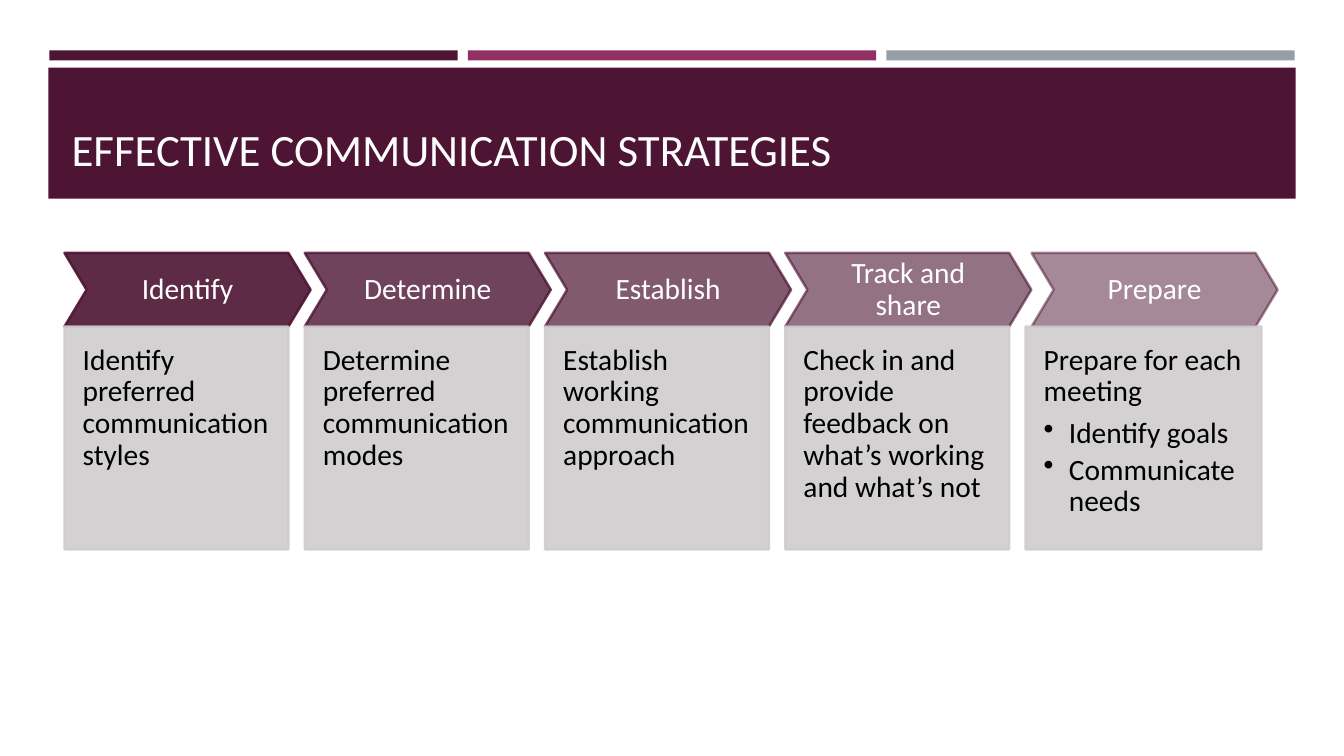
from lxml.etree import SubElement
from pptx import Presentation
from pptx.dml.color import RGBColor
from pptx.enum.shapes import MSO_SHAPE as SHAPE
from pptx.enum.text import MSO_ANCHOR as ANCHOR, PP_ALIGN as ALIGN
from pptx.oxml.ns import qn
from pptx.util import Inches, Pt

PLUM = RGBColor(0x4D, 0x14, 0x34)
MAGENTA = RGBColor(0x90, 0x31, 0x63)
SLATE = RGBColor(0x96, 0x9F, 0xA7)
GRAY = RGBColor(0xD0, 0xCC, 0xCE)
OFF_WHITE = RGBColor(0xFF, 0xFE, 0xFF)
WHITE = RGBColor(0xFF, 0xFF, 0xFF)
BLACK = RGBColor(0x00, 0x00, 0x00)
FONT = "Calibri"

STEPS = [
    ("Identify", "Identify preferred communication styles", []),
    ("Determine", "Determine preferred communication modes", []),
    ("Establish", "Establish working communication approach", []),
    ("Track and share",
     "Check in and provide feedback on what’s working and what’s not", []),
    ("Prepare", "Prepare for each meeting",
     ["Identify goals", "Communicate needs"]),
]
LEFT, PITCH = 0.64, 2.383
CHEVRON_TOP, CHEVRON_WIDTH, CHEVRON_HEIGHT = 2.51, 2.44, 0.73
BOX_TOP, BOX_WIDTH, BOX_HEIGHT = 3.24, 2.22, 2.21


def add_block(kind, left, top, width, height, color, opacity=None):
    """Add a filled shape; with an opacity in percent it also gets an outline."""
    shape = slide.shapes.add_shape(
        kind, Inches(left), Inches(top), Inches(width), Inches(height))
    shape.shadow.inherit = False
    shape.fill.solid()
    shape.fill.fore_color.rgb = color
    if opacity is None:
        shape.line.fill.background()
        return shape
    shape.line.color.rgb = color
    shape.line.width = Pt(1.75)
    for color_element in shape.element.spPr.iter(qn("a:srgbClr")):
        SubElement(color_element, qn("a:alpha"), val=str(opacity * 1000))
    return shape


def write(paragraph, text, color, size=21):
    run = paragraph.add_run()
    run.text = text
    run.font.name = FONT
    run.font.size = Pt(size)
    run.font.color.rgb = color
    paragraph.line_spacing = 0.9


presentation = Presentation()
presentation.slide_width = Inches(13.33)
presentation.slide_height = Inches(7.5)
slide = presentation.slides.add_slide(presentation.slide_layouts[5])

# Header stripes and title band
for index, color in enumerate([PLUM, MAGENTA, SLATE]):
    add_block(SHAPE.RECTANGLE, 0.49 + index * 4.15, 0.5, 4.05, 0.1, color)
add_block(SHAPE.RECTANGLE, 0.48, 0.67, 12.37, 1.3, PLUM)

title = slide.shapes.title
slide.shapes.element.append(title.element)  # bring in front of the band
title.left, title.top = Inches(0.64), Inches(0.68)
title.width, title.height = Inches(12.06), Inches(1.11)
frame = title.text_frame
frame.word_wrap = True
frame.vertical_anchor = ANCHOR.BOTTOM
frame.margin_left = frame.margin_right = Inches(0.07)
frame.margin_top = frame.margin_bottom = Inches(0.04)
frame.paragraphs[0].alignment = ALIGN.LEFT
write(frame.paragraphs[0], "EFFECTIVE COMMUNICATION STRATEGIES", OFF_WHITE, 32)

# Process steps: a chevron above a description box
for index, (heading, description, bullets) in enumerate(STEPS):
    left = LEFT + index * PITCH
    # The bulleted box is wider, and its chevron is set in by half the difference
    extra = 0.12 if bullets else 0

    chevron = add_block(SHAPE.CHEVRON, left + extra / 2, CHEVRON_TOP,
                        CHEVRON_WIDTH, CHEVRON_HEIGHT, PLUM, 90 - index * 10)
    chevron.adjustments[0] = 0.3
    frame = chevron.text_frame
    frame.word_wrap = True
    frame.vertical_anchor = ANCHOR.MIDDLE
    frame.margin_left = frame.margin_right = Inches(0.09)
    frame.margin_top = frame.margin_bottom = Inches(0.09)
    frame.paragraphs[0].alignment = ALIGN.CENTER
    write(frame.paragraphs[0], heading, WHITE)

    box = add_block(SHAPE.RECTANGLE, left, BOX_TOP,
                    BOX_WIDTH + extra, BOX_HEIGHT, GRAY, 90)
    frame = box.text_frame
    frame.word_wrap = True
    frame.vertical_anchor = ANCHOR.TOP
    frame.margin_left = frame.margin_right = frame.margin_top = Inches(0.18)
    frame.margin_bottom = Inches(0.35)
    paragraph = frame.paragraphs[0]
    paragraph.alignment = ALIGN.LEFT
    paragraph.space_after = Pt(7.35)
    write(paragraph, description, BLACK)
    for bullet in bullets:
        paragraph = frame.add_paragraph()
        paragraph.alignment = ALIGN.LEFT
        paragraph.level = 1
        paragraph.space_after = Pt(3.15)
        write(paragraph, bullet, BLACK)
        properties = paragraph._p.get_or_add_pPr()
        properties.set("marL", str(Inches(0.25)))
        properties.set("indent", str(-Inches(0.25)))
        SubElement(properties, qn("a:buChar"), char="•")

presentation.save("out.pptx")
